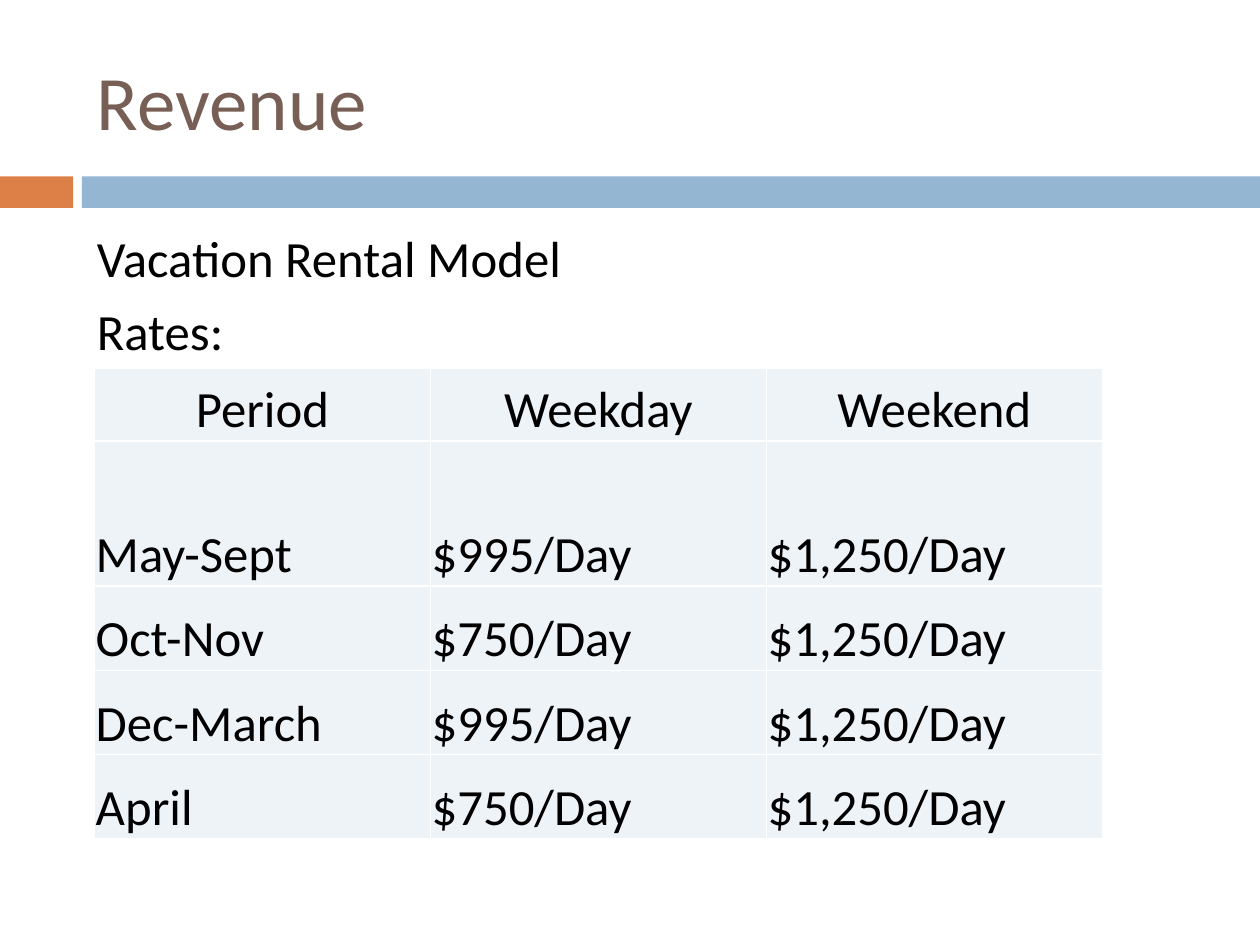
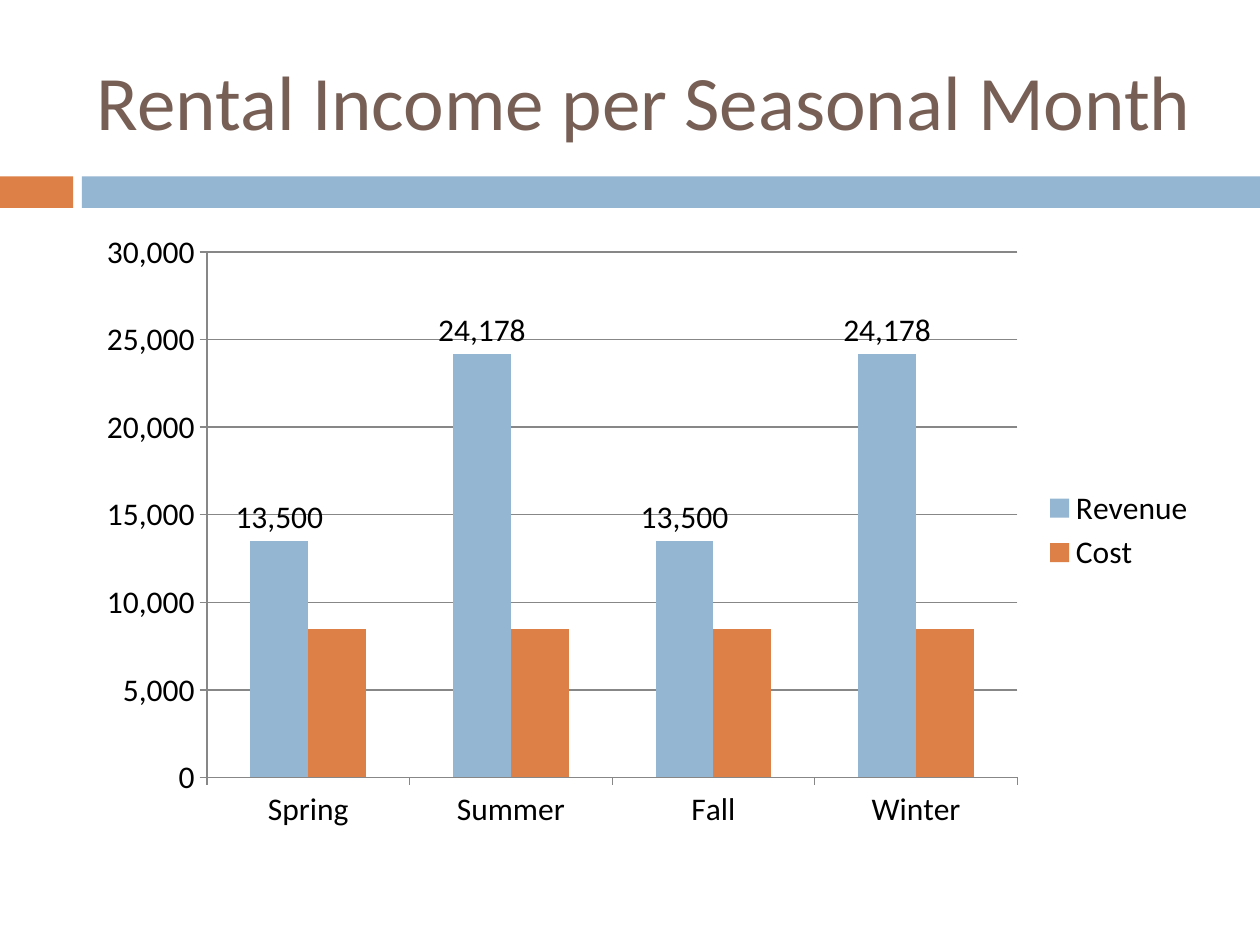
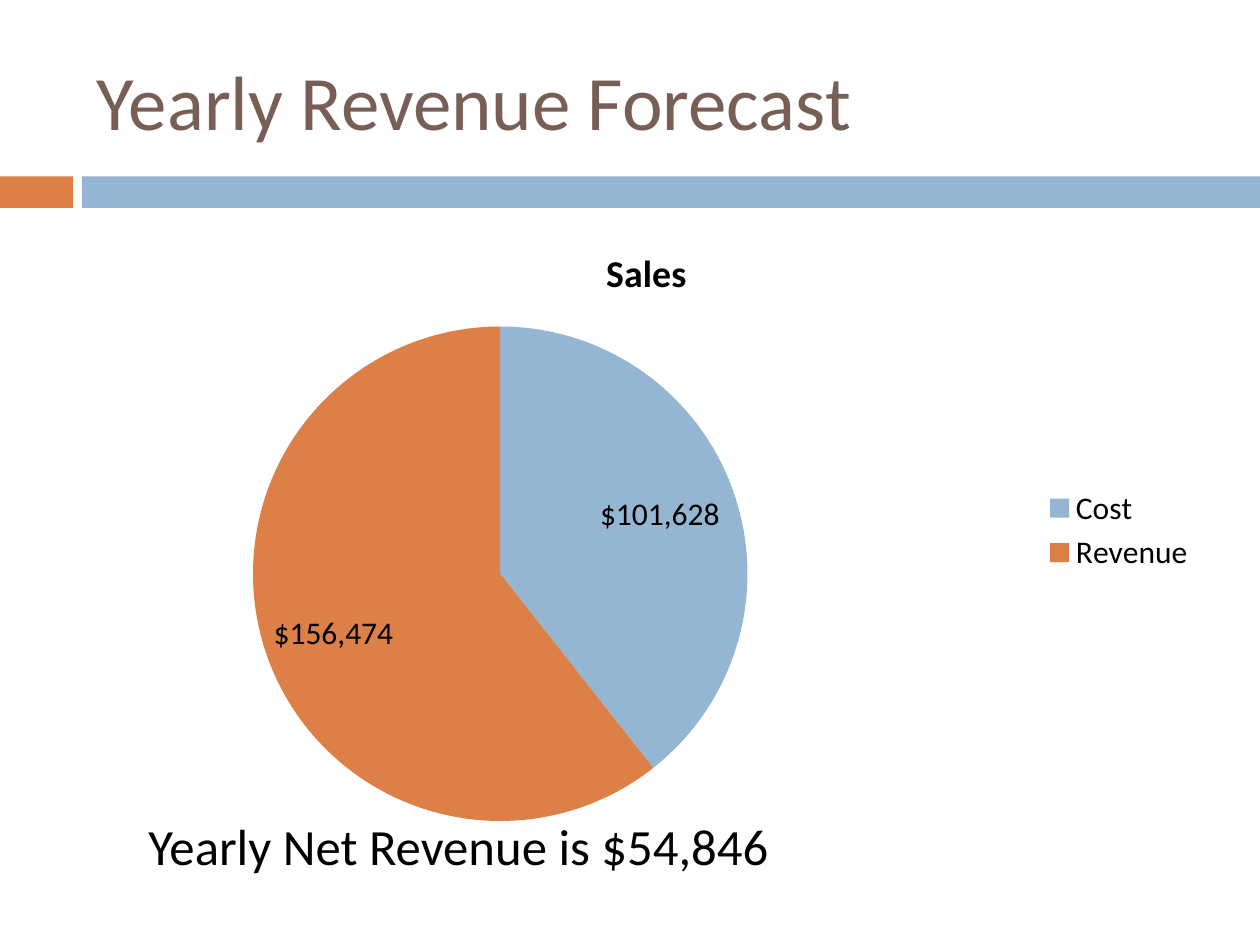
from lxml import etree
from pptx import Presentation
from pptx import util as u
from pptx.chart.data import CategoryChartData
from pptx.dml.color import RGBColor
from pptx.enum import chart as ch, shapes, text
from pptx.oxml import parse_xml
from pptx.oxml.ns import nsdecls, qn

FONT = "Calibri"
C = {"title": "775F55", "text": "000000", "blue": "94B6D2", "orange": "DD8047",
     "cell": "EEF3F7", "white": "FFFFFF", "axis": "878787"}
BODY = [u.Inches(v) for v in (0.67, 1.75, 8.92, 4.92)]


def write(tf, *lines, size=29, color="text", anchor=text.MSO_ANCHOR.TOP,
          align=text.PP_ALIGN.LEFT, before=0):
    """Fill a text frame with one paragraph per line."""
    tf.word_wrap = True
    tf.vertical_anchor = anchor
    for i, line in enumerate(lines):
        p = tf.add_paragraph() if i else tf.paragraphs[0]
        p.alignment = align
        p.space_before = u.Pt(before)
        r = p.add_run()
        r.text = line
        r.font.size = u.Pt(size)
        r.font.name = FONT
        r.font.color.rgb = RGBColor.from_string(C[color])


def add_styled_chart(s, kind, data):
    """Add a chart in the body area with the shared font and legend."""
    chart = s.shapes.add_chart(kind, *BODY, data).chart
    chart.font.size = u.Pt(18)
    chart.font.name = FONT
    chart.font.color.rgb = RGBColor.from_string(C["text"])
    chart.has_legend = True
    chart.legend.position = ch.XL_LEGEND_POSITION.RIGHT
    chart.legend.include_in_layout = False
    return chart


prs = Presentation()
prs.slide_width, prs.slide_height = u.Inches(10), u.Inches(7.5)

# Title and bands of every slide
slides = []
for title in ("Revenue", "Rental Income per Seasonal Month", "Yearly Revenue Forecast"):
    s = prs.slides.add_slide(prs.slide_layouts[6])
    for left, width, color in ((0, 0.58, "orange"), (0.65, 9.35, "blue")):
        band = s.shapes.add_shape(shapes.MSO_SHAPE.RECTANGLE, u.Inches(left), u.Inches(1.4),
                                  u.Inches(width), u.Inches(0.25))
        band.shadow.inherit = False
        band.fill.solid()
        band.fill.fore_color.rgb = RGBColor.from_string(C[color])
        band.line.fill.background()
    box = s.shapes.add_textbox(u.Inches(0.67), u.Inches(0.25), u.Inches(8.92), u.Inches(1.08))
    write(box.text_frame, title, size=44, color="title", anchor=text.MSO_ANCHOR.MIDDLE)
    slides.append(s)
rates_slide, income_slide, forecast_slide = slides

# Rental rates
body = rates_slide.shapes.add_textbox(*BODY)
write(body.text_frame, "Vacation Rental Model", "Rates:", before=7)

rates = [("Period", "Weekday", "Weekend"),
         ("May-Sept", "$995/Day", "$1,250/Day"),
         ("Oct-Nov", "$750/Day", "$1,250/Day"),
         ("Dec-March", "$995/Day", "$1,250/Day"),
         ("April", "$750/Day", "$1,250/Day")]
row_heights = (0.58, 1.15, 0.67, 0.67, 0.67)
table = rates_slide.shapes.add_table(len(rates), 3, u.Inches(0.75), u.Inches(2.92),
                                     u.Inches(8), u.Inches(sum(row_heights))).table
for row, height in zip(table.rows, row_heights):
    row.height = u.Inches(height)
for i, values in enumerate(rates):
    for j, value in enumerate(values):
        cell = table.cell(i, j)
        cell.margin_left = cell.margin_right = cell.margin_top = u.Inches(0.01)
        cell.margin_bottom = 0
        cell.vertical_anchor = text.MSO_ANCHOR.BOTTOM
        write(cell.text_frame, value, anchor=text.MSO_ANCHOR.BOTTOM,
              align=text.PP_ALIGN.LEFT if i else text.PP_ALIGN.CENTER)
        tc_pr = cell._tc.get_or_add_tcPr()
        for side in ("lnL", "lnR", "lnT", "lnB"):
            ln = etree.SubElement(tc_pr, qn(f"a:{side}"), w=str(u.Pt(1)))
            fill = etree.SubElement(ln, qn("a:solidFill"))
            etree.SubElement(fill, qn("a:srgbClr"), val=C["white"])
        cell.fill.solid()
        cell.fill.fore_color.rgb = RGBColor.from_string(C["cell"])

# Income per season
data = CategoryChartData(number_format="#,##0")
data.categories = ["Spring", "Summer", "Fall", "Winter"]
data.add_series("Revenue", (13500, 24178, 13500, 24178))
data.add_series("Cost", (8500,) * 4)
chart = add_styled_chart(income_slide, ch.XL_CHART_TYPE.COLUMN_CLUSTERED, data)
chart.has_title = False
plot = chart.plots[0]
plot.gap_width = 150
plot.overlap = 0
plot.vary_by_categories = False
for series, color in zip(plot.series, ("blue", "orange")):
    series.format.fill.solid()
    series.format.fill.fore_color.rgb = RGBColor.from_string(C[color])
labels = plot.series[0].data_labels
labels.show_value = True
labels.number_format = "#,##0"
labels.number_format_is_linked = False
labels.position = ch.XL_LABEL_POSITION.OUTSIDE_END
chart.value_axis.has_major_gridlines = True
chart.value_axis.tick_labels.number_format = "#,##0"
chart.value_axis.tick_labels.number_format_is_linked = False
for axis in (chart.category_axis, chart.value_axis):
    axis.major_tick_mark = ch.XL_TICK_MARK.OUTSIDE
    axis.format.line.color.rgb = RGBColor.from_string(C["axis"])
chart.value_axis.major_gridlines.format.line.color.rgb = RGBColor.from_string(C["axis"])

# Yearly forecast
data = CategoryChartData()
data.categories = ["Cost", "Revenue"]
data.add_series("Sales", (101628, 156474))
chart = add_styled_chart(forecast_slide, ch.XL_CHART_TYPE.PIE, data)
chart.has_title = True
write(chart.chart_title.text_frame, "Sales", size=21.6, align=text.PP_ALIGN.CENTER)
chart.chart_title.text_frame.paragraphs[0].runs[0].font.bold = True
plot = chart.plots[0]
for i, color in enumerate(("blue", "orange")):
    fill = plot.series[0].points[i].format.fill
    fill.solid()
    fill.fore_color.rgb = RGBColor.from_string(C[color])
labels = plot.series[0].data_labels
labels.show_value = True
labels.show_percentage = False
labels.number_format = r'"$"#,##0_);[Red]\("$"#,##0\)'
labels.number_format_is_linked = False
labels.position = ch.XL_LABEL_POSITION.INSIDE_END

# The pie sits left of the middle
plot_area = chart._chartSpace.chart.plotArea
for old in plot_area.findall(qn("c:layout")):
    plot_area.remove(old)
places = "".join(f'<c:{tag} val="{val}"/>' for tag, val in (
    ("layoutTarget", "inner"), ("xMode", "edge"), ("yMode", "edge"),
    ("x", 0.15), ("y", 0.17), ("w", 0.44), ("h", 0.8)))
plot_area.insert(0, parse_xml(
    f'<c:layout {nsdecls("c")}><c:manualLayout>{places}</c:manualLayout></c:layout>'))

box = forecast_slide.shapes.add_textbox(u.Inches(1.08), u.Inches(6.42), u.Inches(8), u.Inches(0.59))
write(box.text_frame, "Yearly Net Revenue is $54,846")

prs.save("out.pptx")
